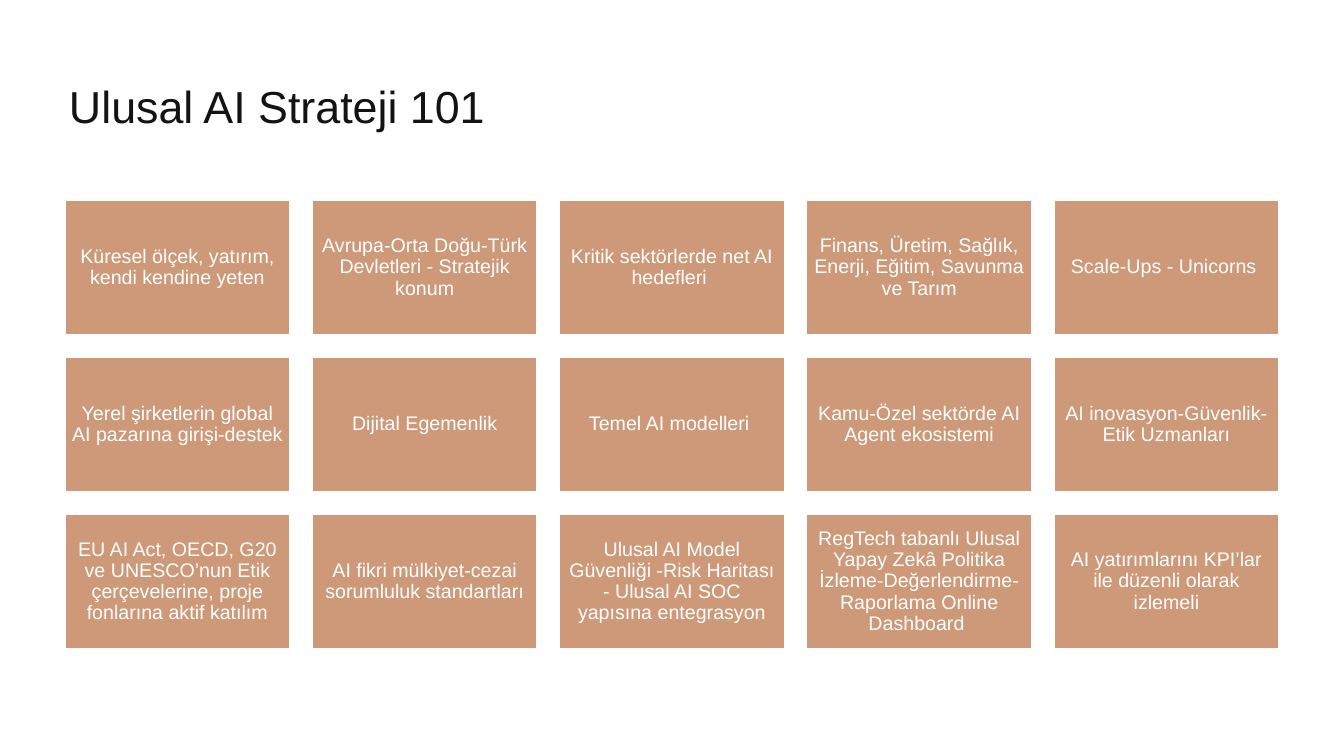
from pptx import Presentation
from pptx.dml.color import RGBColor
from pptx.enum.shapes import MSO_SHAPE
from pptx.enum.text import MSO_ANCHOR, PP_ALIGN
from pptx.util import Emu, Pt

INK = RGBColor(0x13, 0x13, 0x13)
CLAY = RGBColor(0xCD, 0x99, 0x79)
WHITE = RGBColor(0xFF, 0xFF, 0xFF)

# Card grid, in px
LEFT, RIGHT, TOP = 65, 1279, 200
CARD_W, CARD_H, ROW_GAP = 225, 135, 22

CARD_ROWS = [
    ["Küresel ölçek, yatırım, kendi kendine yeten",
     "Avrupa-Orta Doğu-Türk Devletleri - Stratejik konum",
     "Kritik sektörlerde net AI hedefleri ",
     "Finans, Üretim, Sağlık, Enerji, Eğitim, Savunma ve Tarım",
     "Scale-Ups - Unicorns "],
    ["Yerel şirketlerin global AI pazarına girişi-destek",
     "Dijital Egemenlik",
     "Temel AI modelleri ",
     "Kamu-Özel sektörde AI Agent ekosistemi",
     "AI inovasyon-Güvenlik-Etik Uzmanları"],
    ["EU AI Act, OECD, G20 ve UNESCO’nun Etik çerçevelerine, proje fonlarına aktif katılım",
     "AI fikri mülkiyet-cezai sorumluluk standartları",
     "Ulusal AI Model Güvenliği -Risk Haritası - Ulusal AI SOC yapısına entegrasyon",
     "RegTech tabanlı Ulusal Yapay Zekâ Politika İzleme-Değerlendirme-Raporlama Online Dashboard ",
     "AI yatırımlarını KPI’lar ile düzenli olarak izlemeli"],
]


def px(n):
    return Emu(round(n * 914400 / 100.8))


class SlideBuilder:
    font = "Arial"
    line_spacing = 0.9

    def __init__(self, slide):
        self.slide = slide

    def set_text(self, sp, text, size, color, align, anchor, margins):
        tf = sp.text_frame
        tf.text = text
        tf.word_wrap = True
        tf.vertical_anchor = anchor
        (tf.margin_left, tf.margin_top,
         tf.margin_right, tf.margin_bottom) = map(px, margins)
        p = tf.paragraphs[0]
        p.alignment = align
        p.line_spacing = self.line_spacing
        font = p.runs[0].font
        font.name = self.font
        font.size = Pt(size)
        font.color.rgb = color

    def title(self, text, x, y, w, h):
        sp = self.slide.shapes.add_textbox(px(x), px(y), px(w), px(h))
        self.set_text(sp, text, 32, INK, PP_ALIGN.LEFT, MSO_ANCHOR.BOTTOM,
                      (22, 5, 10, 5))

    def card(self, text, x, y, w, h):
        sp = self.slide.shapes.add_shape(
            MSO_SHAPE.RECTANGLE, px(x), px(y), px(w), px(h))
        sp.shadow.inherit = False
        sp.fill.solid()
        sp.fill.fore_color.rgb = CLAY
        sp.line.color.rgb = WHITE
        sp.line.width = Pt(1)
        self.set_text(sp, text, 14, WHITE, PP_ALIGN.CENTER, MSO_ANCHOR.MIDDLE,
                      (6, 6, 6, 6))


def main():
    prs = Presentation()
    prs.slide_width, prs.slide_height = px(1344), px(756)
    builder = SlideBuilder(prs.slides.add_slide(prs.slide_layouts[6]))

    # Title
    builder.title("Ulusal AI Strateji 101", 47, 31, 1174, 107)

    # Cards, spread evenly between the left and right edges
    for row, texts in enumerate(CARD_ROWS):
        step = (RIGHT - LEFT - CARD_W) / (len(texts) - 1)
        for col, text in enumerate(texts):
            builder.card(text, LEFT + col * step,
                         TOP + row * (CARD_H + ROW_GAP), CARD_W, CARD_H)

    prs.save("out.pptx")


if __name__ == "__main__":
    main()
